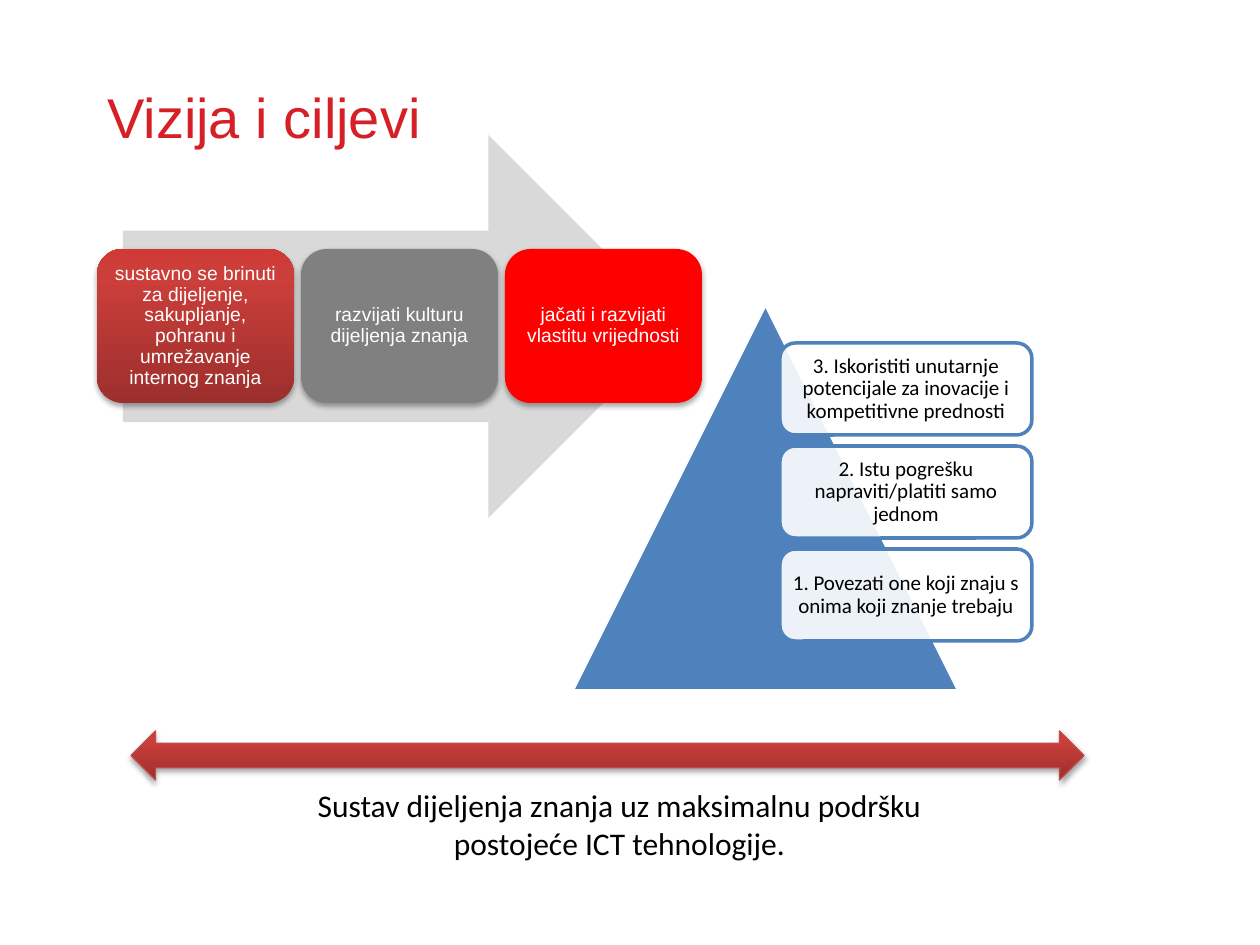
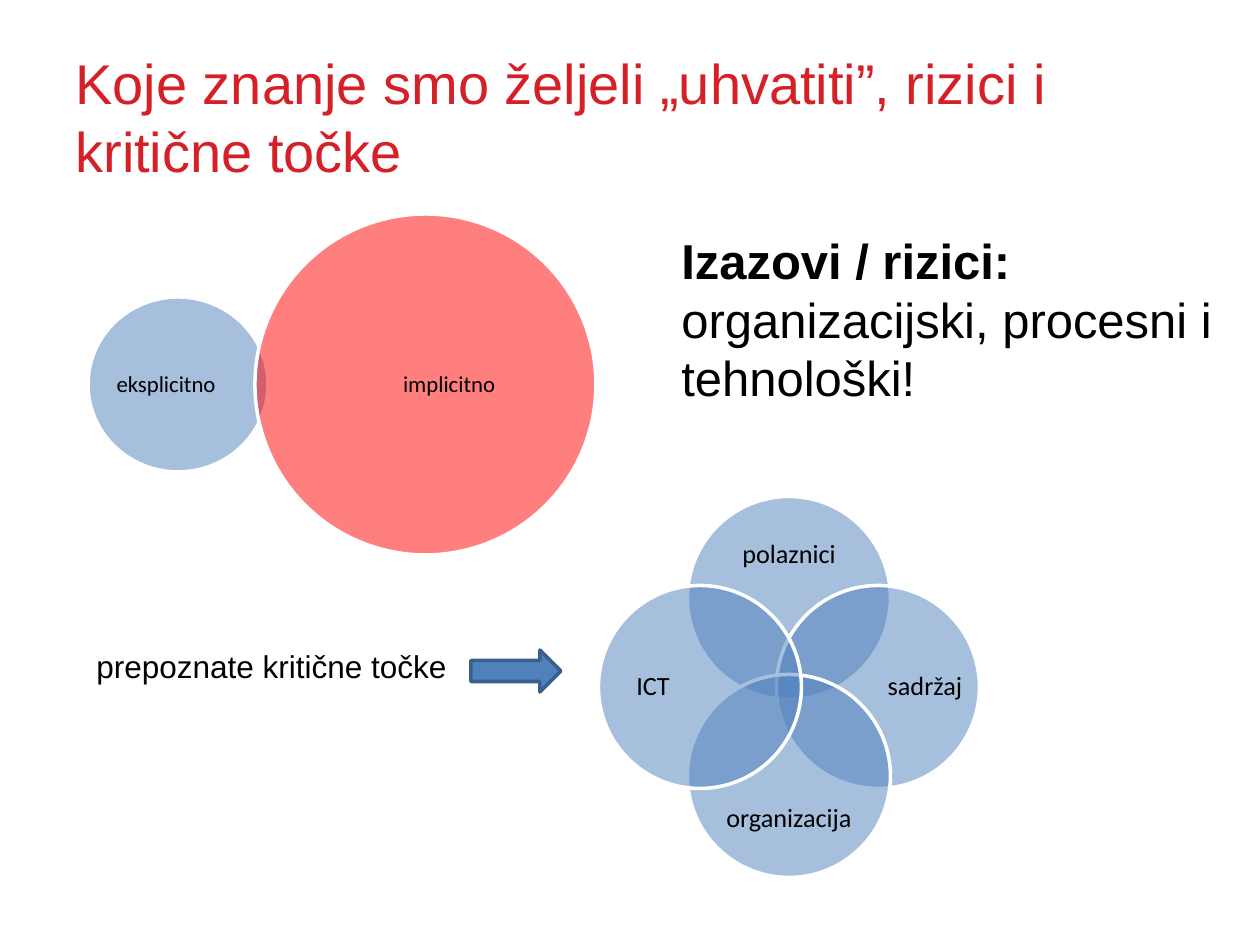
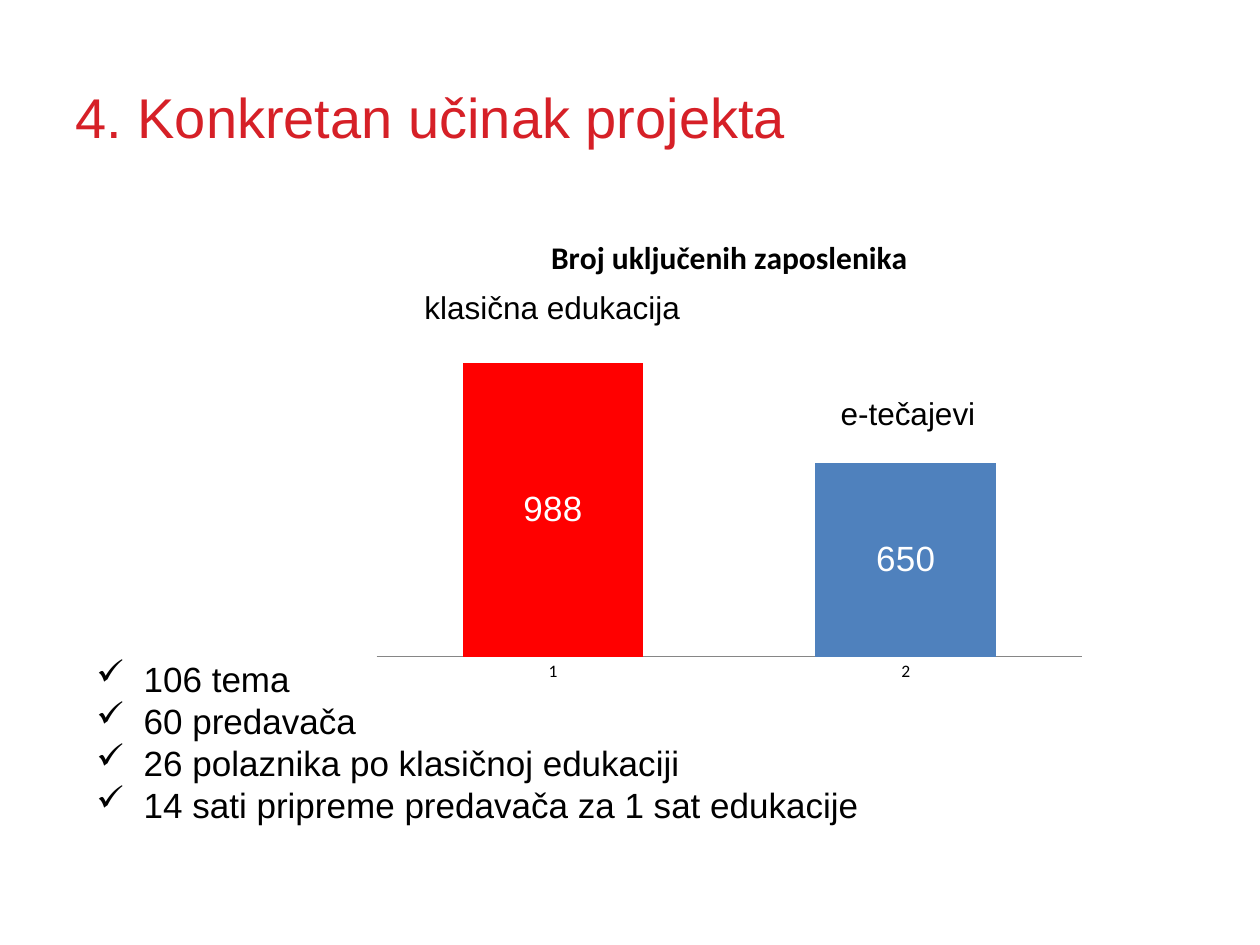
from lxml import etree
from pptx import Presentation
from pptx.chart.data import CategoryChartData
from pptx.dml.color import RGBColor
from pptx.enum.chart import XL_CHART_TYPE as CT, XL_LABEL_POSITION as LP, XL_TICK_MARK as TM
from pptx.enum.shapes import MSO_SHAPE as SH
from pptx.enum.text import MSO_ANCHOR as ANC, PP_ALIGN as AL
from pptx.oxml import parse_xml
from pptx.oxml.ns import nsdecls, qn
from pptx.util import Emu, Pt

BLUE, RED, TITLE, BLACK, WHITE = "4F81BD", "FF0000", "D62027", "000000", "FFFFFF"
GLOSS = [(0, "9C2F2D"), (80, "CB3E3A"), (100, "CE3B37")]  # from bottom to top

# Content
TITLES = [
    ("Vizija i ciljevi", 95),
    ("Koje znanje smo željeli „uhvatiti”, rizici i kritične točke", 63),
    ("4. Konkretan učinak projekta", 63),
]
VISION = [
    ("sustavno se brinuti za dijeljenje, sakupljanje, pohranu i umrežavanje internog znanja", GLOSS),
    ("razvijati kulturu dijeljenja znanja", "808080"),
    ("jačati i razvijati vlastitu vrijednosti", RED),
]
GOALS = [
    "3. Iskoristiti unutarnje potencijale za inovacije i kompetitivne prednosti",
    "2. Istu pogrešku napraviti/platiti samo jednom",
    "1. Povezati one koji znaju s onima koji znanje trebaju",
]
SUPPORT = "Sustav dijeljenja znanja uz maksimalnu podršku postojeće ICT tehnologije."
KNOWLEDGE = [  # label, label centre x, circle box, colour
    ("eksplicitno", 166, (88, 297, 180, 175), BLUE),
    ("implicitno", 449, (255, 214, 341, 341), RED),
]
CRITICAL = [  # label, direction from the centre
    ("polaznici", 0, -1), ("sadržaj", 1, 0), ("organizacija", 0, 1), ("ICT", -1, 0),
]
RISKS = [("Izazovi / rizici: ", True), ("organizacijski, procesni i tehnološki!", False)]
FACTS = ["106 tema", "60 predavača", "26 polaznika po klasičnoj edukaciji",
         "14 sati pripreme predavača za 1 sat edukacije"]
CHART_TITLE = "Broj uključenih zaposlenika"
STAFF = [988, 650]
BAR_NAMES = [("klasična edukacija", (412, 282, 307, 50), AL.LEFT),
             ("e-tečajevi", (789, 388, 238, 50), AL.CENTER)]


def px(v):
    return Emu(round(v * 914400 / 126))


def rgb(h):
    return RGBColor.from_string(h)


def style(font, size, color=BLACK, name="Arial", bold=False):
    font.size, font.name, font.bold = Pt(size), name, bold
    font.color.rgb = rgb(color)


def write(s, text, size, color=BLACK, font="Arial", align=AL.LEFT,
          anchor=ANC.TOP, inset=None, spacing=None):
    """Fill a shape with text, a list of lines giving one paragraph each."""
    tf = s.text_frame
    tf.word_wrap, tf.vertical_anchor = True, anchor
    if inset is not None:
        tf.margin_left = tf.margin_top = tf.margin_right = tf.margin_bottom = px(inset)
    tf.text = text if isinstance(text, str) else "\n".join(text)
    for p in tf.paragraphs:
        p.alignment = align
        if spacing:
            p.line_spacing = spacing
        for r in p.runs:
            style(r.font, size, color, font)
    return tf


def text_box(slide, box, text, size, **kw):
    return write(slide.shapes.add_textbox(*map(px, box)), text, size, **kw)


def centred(slide_or_shape, text, size, inset, box=None, **kw):
    kw.update(align=AL.CENTER, anchor=ANC.MIDDLE, inset=inset, spacing=0.9)
    if box:
        return text_box(slide_or_shape, box, text, size, **kw)
    return write(slide_or_shape, text, size, **kw)


def shape(slide, kind, box, fill, line=None, width=2, alpha=None, shadow=False):
    s = slide.shapes.add_shape(kind, *map(px, box))
    if isinstance(fill, str):
        s.fill.solid()
        s.fill.fore_color.rgb = rgb(fill)
        if alpha:
            clr = s._element.spPr.find(qn("a:solidFill"))[0]
            etree.SubElement(clr, qn("a:alpha")).set("val", str(alpha * 1000))
    else:
        stops = "".join(f'<a:gs pos="{pos * 1000}"><a:srgbClr val="{c}"/></a:gs>' for pos, c in fill)
        s._element.spPr.insert(2, parse_xml(
            f'<a:gradFill {nsdecls("a")} rotWithShape="1"><a:gsLst>{stops}</a:gsLst>'
            '<a:lin ang="16200000" scaled="0"/></a:gradFill>'))
    if line:
        s.line.color.rgb, s.line.width = rgb(line), Pt(width)
    else:
        s.line.fill.background()
    s.shadow.inherit = False
    if shadow:
        s._element.spPr.find(qn("a:effectLst")).append(parse_xml(
            f'<a:outerShdw {nsdecls("a")} blurRad="40000" dist="23000" dir="5400000" rotWithShape="0">'
            '<a:srgbClr val="000000"><a:alpha val="35000"/></a:srgbClr></a:outerShdw>'))
    return s


def add_slide(prs, title, left):
    slide = prs.slides.add_slide(prs.slide_layouts[6])
    text_box(slide, (left, 37, 1134, 158), title, 32, color=TITLE, anchor=ANC.MIDDLE)
    return slide


def vision_slide(slide):
    # Goals on the pyramid
    shape(slide, SH.ISOSCELES_TRIANGLE, (572, 304, 387, 387), BLUE, WHITE)
    for i, goal in enumerate(GOALS):
        s = shape(slide, SH.ROUNDED_RECTANGLE, (780, 343 + 103 * i, 252, 92), WHITE, BLUE, alpha=90)
        centred(s, goal, 12, 6, font="Calibri")
    # Supporting system
    shape(slide, SH.LEFT_RIGHT_ARROW, (131, 731, 953, 49), GLOSS, "BF4C48", 0.75, shadow=True)
    text_box(slide, (302, 780, 635, 127), SUPPORT, 18, font="Calibri", align=AL.CENTER)
    # Vision steps on the arrow
    shape(slide, SH.RIGHT_ARROW, (123, 135, 557, 383), "D9D9D9")
    for i, (step, fill) in enumerate(VISION):
        s = shape(slide, SH.ROUNDED_RECTANGLE, (97 + 204 * i, 249, 197, 154), fill, shadow=True)
        centred(s, step, 11, 6, color=WHITE)


def knowledge_slide(slide):
    # Two kinds of knowledge
    for label, mid, box, color in KNOWLEDGE:
        shape(slide, SH.OVAL, box, color, WHITE, alpha=50)
        centred(slide, label, 13, 0, (mid - 60, 353, 120, 64), font="Calibri")
    # Risks
    tf = text_box(slide, (669, 224, 595, 251), "", 28)
    for part, bold in RISKS:
        r = tf.paragraphs[0].add_run()
        r.text = part
        style(r.font, 28, bold=bold)
    # Critical points around one centre
    cx, cy, size, step = 789, 687, 203, 89
    for label, dx, dy in CRITICAL:
        shape(slide, SH.OVAL, (cx + step * dx - size / 2, cy + step * dy - size / 2, size, size),
              BLUE, WHITE, alpha=50)
        centred(slide, label, 15, 0, (cx + 136 * dx - 78, cy + 132 * dy - 32, 156, 64), font="Calibri")
    text_box(slide, (84, 641, 387, 50), "prepoznate kritične točke", 18)
    shape(slide, SH.RIGHT_ARROW, (471, 650, 90, 42), BLUE, "3A5F8C")


def effect_slide(slide):
    # Facts with check marks
    tf = text_box(slide, (84, 651, 1002, 183), FACTS, 20)
    for p in tf.paragraphs:
        pPr = p._p.get_or_add_pPr()
        pPr.set("marL", "342900")
        pPr.set("indent", "-342900")
        etree.SubElement(pPr, qn("a:buChar")).set("char", "✓")
    # Staff chart
    data = CategoryChartData()
    data.categories = ["1", "2"]
    data.add_series("Series 1", STAFF)
    chart = slide.shapes.add_chart(CT.COLUMN_STACKED, *map(px, (362, 214, 735, 476)), data).chart
    style(chart.font, 10, name="Calibri")
    chart.has_legend = False
    chart.has_title = True
    tf = chart.chart_title.text_frame
    tf.text = CHART_TITLE
    style(tf.paragraphs[0].runs[0].font, 18, name="Calibri", bold=True)
    val, cat = chart.value_axis, chart.category_axis
    val.minimum_scale, val.maximum_scale = 0, 1200
    val.has_major_gridlines = val.visible = False
    cat.major_tick_mark = TM.NONE
    cat.format.line.color.rgb = rgb("868686")
    plot = chart.plots[0]
    plot.gap_width, plot.overlap, plot.vary_by_categories = 95, 100, False
    series = plot.series[0]
    for i, color in enumerate((RED, BLUE)):
        fill = series.points[i].format.fill
        fill.solid()
        fill.fore_color.rgb = rgb(color)
    labels = series.data_labels
    labels.show_value, labels.position = True, LP.CENTER
    style(labels.font, 20, WHITE)
    # Fixed plot area inside the chart
    area = chart._chartSpace.chart.plotArea
    for old in area.findall(qn("c:layout")):
        area.remove(old)
    parts = [("layoutTarget", "inner"), ("xMode", "edge"), ("yMode", "edge"),
             ("x", 0.02), ("y", 0.18), ("w", 0.96), ("h", 0.75)]
    inner = "".join(f'<c:{k} val="{v}"/>' for k, v in parts)
    area.insert(0, parse_xml(
        f'<c:layout {nsdecls("c")}><c:manualLayout>{inner}</c:manualLayout></c:layout>'))
    # Names above the bars
    for name, box, align in BAR_NAMES:
        text_box(slide, box, name, 18, align=align)


def main():
    prs = Presentation()
    prs.slide_width, prs.slide_height = px(1260), px(945)
    for (title, left), build in zip(TITLES, (vision_slide, knowledge_slide, effect_slide)):
        build(add_slide(prs, title, left))
    prs.save("out.pptx")


if __name__ == "__main__":
    main()
